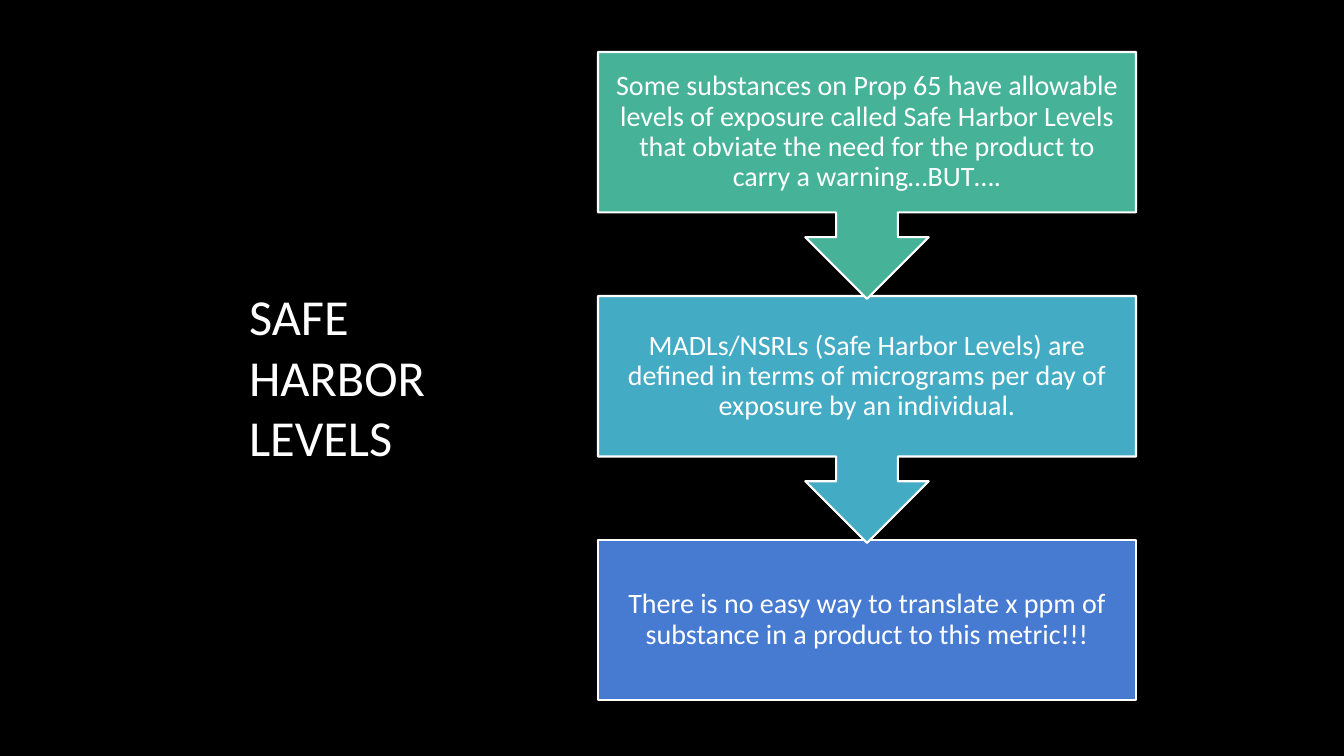
from pptx import Presentation
from pptx.dml.color import RGBColor
from pptx.enum.shapes import MSO_SHAPE as Shape
from pptx.enum.text import MSO_ANCHOR as Anchor, MSO_AUTO_SIZE as Fit, PP_ALIGN as Align
from pptx.util import Pt

PX = 12192000 / 1344
LEFT, TOP, WIDTH, STEP = 598, 52, 538, 244
BOX, CALL, INSET = 160, 247, 16


def px(*sizes):
    return [round(size * PX) for size in sizes]


def write(shape, text, size, form, para):
    """Put one white paragraph in the shape, with frame and paragraph formats."""
    frame = shape.text_frame
    frame.text = text
    line = frame.paragraphs[0]
    font = {"name": "Calibri", "size": Pt(size)}
    for part, values in ((frame, form), (line, para), (line.font, font)):
        for key, value in values.items():
            setattr(part, key, value)
    line.font.color.rgb = RGBColor.from_string("FFFFFF")


deck = Presentation()
deck.slide_width, deck.slide_height = px(1344, 756)
slide = deck.slides.add_slide(deck.slide_layouts[5])
back = slide.background.fill
back.solid()
back.fore_color.rgb = RGBColor.from_string("000000")

form = {"word_wrap": True, "auto_size": Fit.NONE, "vertical_anchor": Anchor.MIDDLE}
title = slide.shapes.title
title.left, title.top, title.width, title.height = px(239, 112, 282, 528)
write(title, "SAFE HARBOR LEVELS", 36, form, {"alignment": Align.LEFT})

steps = [
    ("46B298", Shape.DOWN_ARROW_CALLOUT, CALL,
     "Some substances on Prop 65 have allowable levels of exposure called Safe Harbor "
     "Levels that obviate the need for the product to carry a warning…BUT…."),
    ("44ABC4", Shape.DOWN_ARROW_CALLOUT, CALL,
     "MADLs/NSRLs (Safe Harbor Levels) are defined in terms of micrograms per day of "
     "exposure by an individual."),
    ("477BD1", Shape.RECTANGLE, BOX,
     "There is no easy way to translate x ppm of substance in a product to this metric!!!"),
]
inset, = px(INSET)
sides = ("left", "top", "right", "bottom")
padded = form | {f"margin_{side}": inset for side in sides}
centred = {"alignment": Align.CENTER, "line_spacing": 0.9}

# Bottom step first, so each arrow tip lies over the box below it
for row, (color, kind, height, text) in reversed(list(enumerate(steps))):
    step = slide.shapes.add_shape(kind, *px(LEFT, TOP + row * STEP, WIDTH, height))
    step.shadow.inherit = False
    step.fill.solid()
    step.fill.fore_color.rgb = RGBColor.from_string(color)
    step.line.color.rgb = RGBColor.from_string("FFFFFF")
    step.line.width = Pt(1.5)
    write(step, text, 20, padded, centred)

deck.save("out.pptx")
